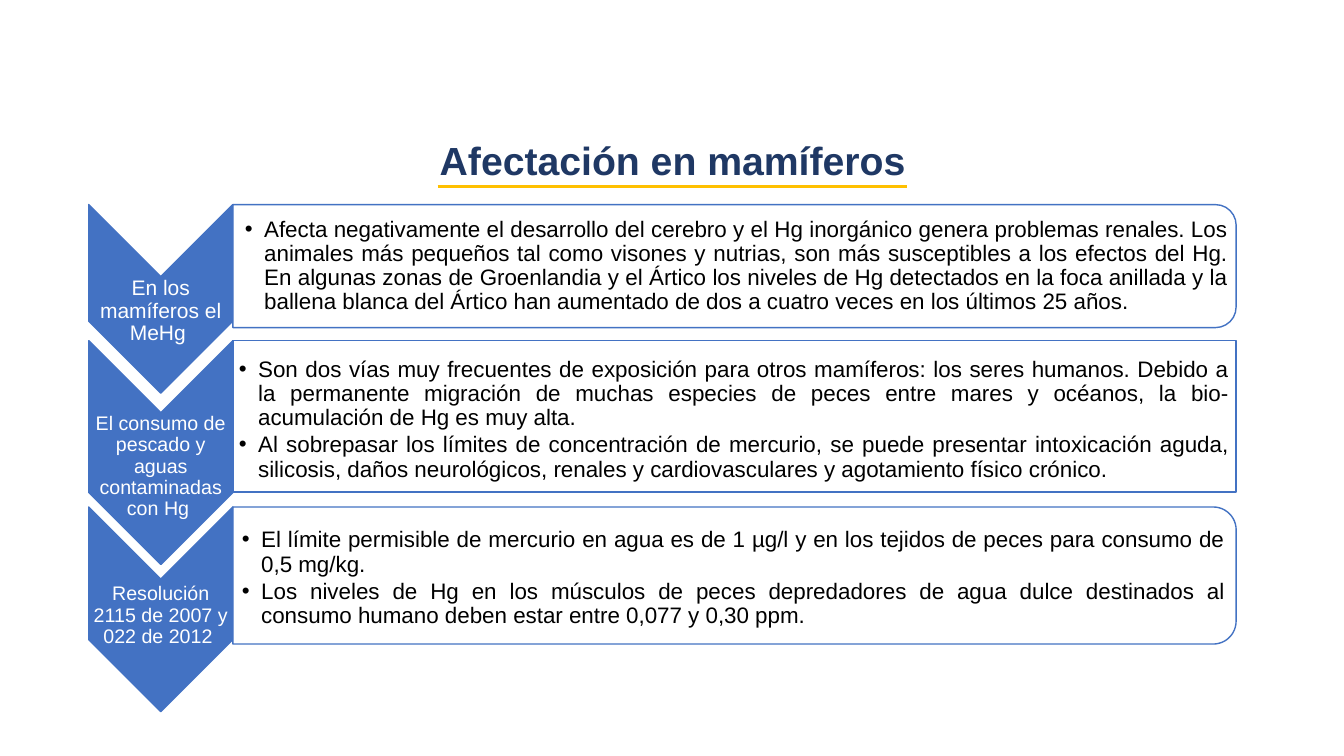
from dataclasses import dataclass

from lxml import etree
from pptx import Presentation
from pptx import util as u
from pptx.dml.color import RGBColor
from pptx.enum import shapes, text
from pptx.oxml import ns

NAVY = RGBColor(0x1F, 0x38, 0x64)
BLUE = RGBColor(0x43, 0x72, 0xC3)
GOLD = RGBColor(0xFF, 0xC0, 0x00)
WHITE = RGBColor(0xFF, 0xFF, 0xFF)
BLACK = RGBColor(0, 0, 0)
FONT = "Arial"
SIDE, ARM = 0.88, 1.43  # left edge and width of the chevrons
EDGE, SPAN = 2.31, 9.95  # left edge and width of the bands


@dataclass
class Box:
    left: float
    top: float
    width: float
    height: float


@dataclass
class Row:
    label: str
    size: int
    label_top: float
    top: float
    tall: float  # height of the chevron
    band: float  # height of the band
    bend: float  # corner rounding of the band
    body: Box
    items: list[str]


ROWS = [
    Row("En los mamíferos el MeHg ", 15, 2.81, 2.03, 1.87, 1.22, 0.167,
        Box(2.31, 2.09, 9.88, 1.1),
        ["Afecta negativamente el desarrollo del cerebro y el Hg inorgánico "
         "genera problemas renales. Los animales más pequeños tal como visones "
         "y nutrias, son más susceptibles a los efectos del Hg. En algunas "
         "zonas de Groenlandia y el Ártico los niveles de Hg detectados en la "
         "foca anillada y la ballena blanca del Ártico han aumentado de dos a "
         "cuatro veces en los últimos 25 años."]),
    Row("El consumo de pescado y aguas contaminadas con Hg ", 14, 4.35, 3.38,
        2.22, 1.5, 0, Box(2.25, 3.43, 9.95, 1.47),
        ["Son dos vías muy frecuentes de exposición para otros mamíferos: los "
         "seres humanos. Debido a la permanente migración de muchas especies "
         "de peces entre mares y océanos, la bio-acumulación de Hg es muy alta.",
         "Al sobrepasar los límites de concentración de mercurio, se puede "
         "presentar intoxicación aguda, silicosis, daños neurológicos, renales "
         "y cardiovasculares y agotamiento físico crónico."]),
    Row("Resolución 2115 de 2007 y 022 de 2012 ", 14, 5.83, 5.03, 2.03, 1.36,
        0.167, Box(2.28, 5.19, 9.88, 1.1),
        ["El límite permisible de mercurio en agua es de 1 µg/l y en los "
         "tejidos de peces para consumo de 0,5 mg/kg. ",
         "Los niveles de Hg en los músculos de peces depredadores de agua "
         "dulce destinados al consumo humano deben estar entre 0,077 y 0,30 "
         "ppm."]),
]


def place(shape, box: Box) -> None:
    shape.left, shape.top = u.Inches(box.left), u.Inches(box.top)
    shape.width, shape.height = u.Inches(box.width), u.Inches(box.height)


def turn(slide, kind, box: Box, fill: RGBColor, bends: list[float]):
    """Add a shape turned by 90 degrees that fills the given box."""
    shift = (box.width - box.height) / 2
    shape = slide.shapes.add_shape(kind, 0, 0, 0, 0)
    place(shape, Box(box.left + shift, box.top - shift, box.height, box.width))
    shape.rotation = 90
    for i, bend in enumerate(bends):
        shape.adjustments[i] = bend
    shape.shadow.inherit = False
    shape.fill.solid()
    shape.fill.fore_color.rgb = fill
    shape.line.color.rgb = BLUE
    shape.line.width = u.Pt(1)
    return shape


def setup(frame, left: float = 0.01) -> None:
    frame.word_wrap = True
    frame.auto_size = text.MSO_AUTO_SIZE.NONE
    frame.vertical_anchor = text.MSO_ANCHOR.MIDDLE
    frame.margin_left = u.Inches(left)
    frame.margin_top = frame.margin_right = frame.margin_bottom = u.Inches(0.01)


def style(para, size: float, color: RGBColor, align, bold: bool = False,
          gap: float = 0) -> None:
    para.alignment = align
    para.line_spacing = 0.9
    para.space_before = u.Pt(gap)
    para.space_after = u.Pt(0)
    for run in para.runs:
        font = run.font
        font.name, font.size, font.bold = FONT, u.Pt(size), bold
        font.color.rgb = color


def bullet(para) -> None:
    props = para._p.get_or_add_pPr()
    props.set("marL", str(u.Inches(0.19)))
    props.set("indent", str(-u.Inches(0.19)))
    tint = etree.SubElement(props, ns.qn("a:buClr"))
    etree.SubElement(tint, ns.qn("a:srgbClr"), val=str(BLACK))
    etree.SubElement(props, ns.qn("a:buFont"), typeface=FONT)
    etree.SubElement(props, ns.qn("a:buChar"), char="•")


def draw(slide, row: Row, body) -> None:
    # Chevron and its label
    turn(slide, shapes.MSO_SHAPE.CHEVRON, Box(SIDE, row.top, ARM, row.tall),
         BLUE, [0.5])
    label = slide.shapes.add_textbox(0, 0, 0, 0)
    place(label, Box(SIDE, row.label_top, ARM, 0.56))
    frame = label.text_frame
    setup(frame)
    frame.text = row.label
    style(frame.paragraphs[0], row.size, WHITE, text.PP_ALIGN.CENTER)

    # Band, slightly see-through
    band = turn(slide, shapes.MSO_SHAPE.ROUND_2_SAME_RECTANGLE,
                Box(EDGE, row.top, SPAN, row.band), WHITE, [row.bend, 0])
    tint = band._element.spPr.find(ns.qn("a:solidFill"))[0]
    etree.SubElement(tint, ns.qn("a:alpha"), val="90000")

    # List, raised above its band
    place(body, row.body)
    slide.shapes._spTree.append(body._element)
    frame = body.text_frame
    setup(frame, 0.12)
    frame.text = "\n".join(row.items)
    for i, para in enumerate(frame.paragraphs):
        para.level = 1
        bullet(para)
        style(para, 16, BLACK, text.PP_ALIGN.JUSTIFY, gap=2.4 if i else 0)


def main() -> None:
    deck = Presentation()
    deck.slide_width, deck.slide_height = u.Inches(13.33), u.Inches(7.5)
    # The comparison layout has a title and four body placeholders
    slide = deck.slides.add_slide(deck.slide_layouts[4])

    # Title and its rule
    title = slide.shapes.title
    place(title, Box(0.92, 0.86, 11.5, 1.51))
    title.text_frame.text = "Afectación en mamíferos"
    title.text_frame.vertical_anchor = text.MSO_ANCHOR.MIDDLE
    style(title.text_frame.paragraphs[0], 28, NAVY, text.PP_ALIGN.CENTER, True)
    rule = slide.shapes.add_connector(
        shapes.MSO_CONNECTOR.STRAIGHT, u.Inches(4.34), u.Inches(1.85),
        u.Inches(9), u.Inches(1.85))
    rule.line.color.rgb = GOLD
    rule.line.width = u.Pt(2.25)
    etree.SubElement(rule._element.spPr, ns.qn("a:effectLst"))

    # Rows
    bodies = list(slide.placeholders)[1:]
    for row, body in zip(ROWS, bodies):
        draw(slide, row, body)
    for spare in bodies[len(ROWS):]:
        slide.shapes._spTree.remove(spare._element)

    deck.save("out.pptx")


if __name__ == "__main__":
    main()
